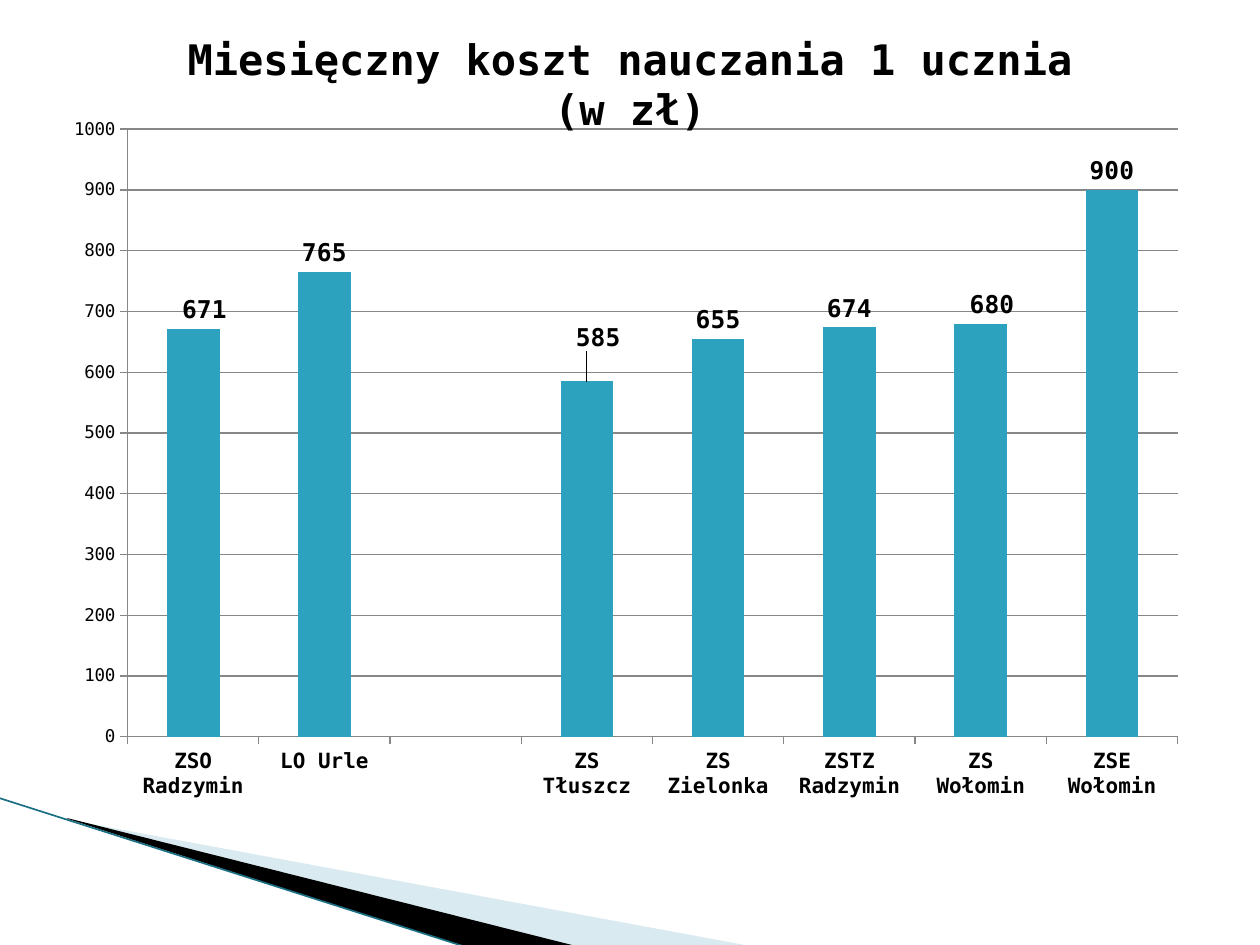
from lxml.etree import SubElement
from pptx import Presentation
from pptx.chart.data import CategoryChartData
from pptx.dml.color import RGBColor
from pptx.enum.chart import XL_CHART_TYPE as ChartType
from pptx.enum.chart import XL_LABEL_POSITION as LabelPosition
from pptx.enum.chart import XL_TICK_MARK as TickMark
from pptx.enum.shapes import MSO_CONNECTOR as Connector
from pptx.oxml import parse_xml
from pptx.oxml.ns import nsdecls, qn
from pptx.util import Emu, Pt

EMU_PER_PX = 914400 / 126
FONT = "DejaVu Sans Mono"
BLACK, BAR, GRID = "000000", "2DA2BF", "878787"
COSTS = {
    "ZSO Radzymin": 671,
    "LO Urle": 765,
    "": None,
    "ZS Tłuszcz": 585,
    "ZS Zielonka": 655,
    "ZSTZ Radzymin": 674,
    "ZS Wołomin": 680,
    "ZSE Wołomin": 900,
}
# Bar index -> label shift as a fraction of the chart's width and height
LABEL_SHIFTS = {0: (0.01, 0), 3: (0.01, -0.03), 6: (0.01, 0)}
PLOT_AREA = {"x": 0.057, "y": 0.156, "w": 0.926, "h": 0.734}


def px(value):
    return Emu(round(value * EMU_PER_PX))


def color(value):
    return RGBColor.from_string(value)


def manual_layout(inner=False, **values):
    """Return a c:layout element; sizes and positions are chart fractions."""
    target = '<c:layoutTarget val="inner"/>' if inner else ""
    modes = '<c:xMode val="edge"/><c:yMode val="edge"/>' if inner else ""
    numbers = "".join(f'<c:{key} val="{value}"/>' for key, value in values.items())
    return parse_xml(
        f'<c:layout {nsdecls("c")}><c:manualLayout>{target}{modes}{numbers}'
        "</c:manualLayout></c:layout>"
    )


class SlideBuilder:
    def __init__(self, slide, font_name):
        self.slide = slide
        self.font_name = font_name

    def format_font(self, font, size, bold=False):
        values = {"name": self.font_name, "size": Pt(size), "bold": bold}
        for name, value in values.items():
            setattr(font, name, value)
        font.color.rgb = color(BLACK)

    def polygon(self, points, fill, alpha=None):
        builder = self.slide.shapes.build_freeform(*points[0], scale=EMU_PER_PX)
        builder.add_line_segments(points[1:], close=True)
        shape = builder.convert_to_shape()
        shape.shadow.inherit = False
        shape.fill.solid()
        shape.fill.fore_color.rgb = color(fill)
        shape.line.fill.background()
        if alpha is not None:
            fill_color = next(shape.fill._xPr.iter(qn("a:srgbClr")))
            SubElement(fill_color, qn("a:alpha"), val=str(alpha * 1000))

    def line(self, start, end, stroke, width):
        connector = self.slide.shapes.add_connector(
            Connector.STRAIGHT, *map(px, start + end)
        )
        connector.line.color.rgb = color(stroke)
        connector.line.width = Pt(width)
        SubElement(connector._element.spPr, qn("a:effectLst"))

    def column_chart(self, box, title, costs):
        data = CategoryChartData()
        data.categories = list(costs)
        data.add_series("Series 1", list(costs.values()))
        chart = self.slide.shapes.add_chart(
            ChartType.COLUMN_CLUSTERED, *map(px, box), data
        ).chart
        chart.has_legend = False
        self.format_font(chart.font, 10)

        chart.has_title = True
        paragraph = chart.chart_title.text_frame.paragraphs[0]
        run = paragraph.add_run()
        run.text = title
        self.format_font(run.font, 24, bold=True)

        plot_area = chart._chartSpace.chart.plotArea
        for layout in plot_area.findall(qn("c:layout")):
            plot_area.remove(layout)
        plot_area.insert(0, manual_layout(inner=True, **PLOT_AREA))
        self.format_axes(chart)
        self.format_bars(chart.plots[0])

    def format_axes(self, chart):
        category_axis, value_axis = chart.category_axis, chart.value_axis
        for axis, size, bold in ((category_axis, 12, True), (value_axis, 10, False)):
            axis.major_tick_mark = TickMark.OUTSIDE
            axis.minor_tick_mark = TickMark.NONE
            axis.format.line.color.rgb = color(GRID)
            axis.format.line.width = Pt(0.75)
            self.format_font(axis.tick_labels.font, size, bold)
        scale = {"minimum_scale": 0, "maximum_scale": 1000, "major_unit": 100}
        for name, value in scale.items():
            setattr(value_axis, name, value)
        value_axis.has_major_gridlines = True
        gridline = value_axis.major_gridlines.format.line
        gridline.color.rgb = color(GRID)
        gridline.width = Pt(0.75)

    def format_bars(self, plot):
        plot.gap_width = 150
        plot.vary_by_categories = False
        series = plot.series[0]
        series.format.fill.solid()
        series.format.fill.fore_color.rgb = color(BAR)
        series.invert_if_negative = False
        labels = series.data_labels
        labels.show_value = True
        labels.position = LabelPosition.OUTSIDE_END
        self.format_font(labels.font, 14, bold=True)
        for index, (x, y) in LABEL_SHIFTS.items():
            label = series.points[index].data_label
            self.format_font(label.font, 14, bold=True)
            label.position = LabelPosition.OUTSIDE_END
            element = label._get_or_add_dLbl()
            element.insert(1, manual_layout(x=x, y=y))


def main():
    presentation = Presentation()
    presentation.slide_width, presentation.slide_height = px(1260), px(945)
    slide = presentation.slides.add_slide(presentation.slide_layouts[6])
    builder = SlideBuilder(slide, FONT)
    builder.polygon([(69, 820), (750, 946), (575, 946), (69, 819)], "A0CBDC", alpha=40)
    builder.polygon([(67, 818), (576, 946), (469, 948), (68, 819)], BLACK)
    builder.line((-1, 798), (469, 948), "1B6F83", 0.95)
    builder.column_chart(
        (63, 0, 1134, 828), "Miesięczny koszt nauczania 1 ucznia (w zł)", COSTS
    )
    presentation.save("out.pptx")


if __name__ == "__main__":
    main()
